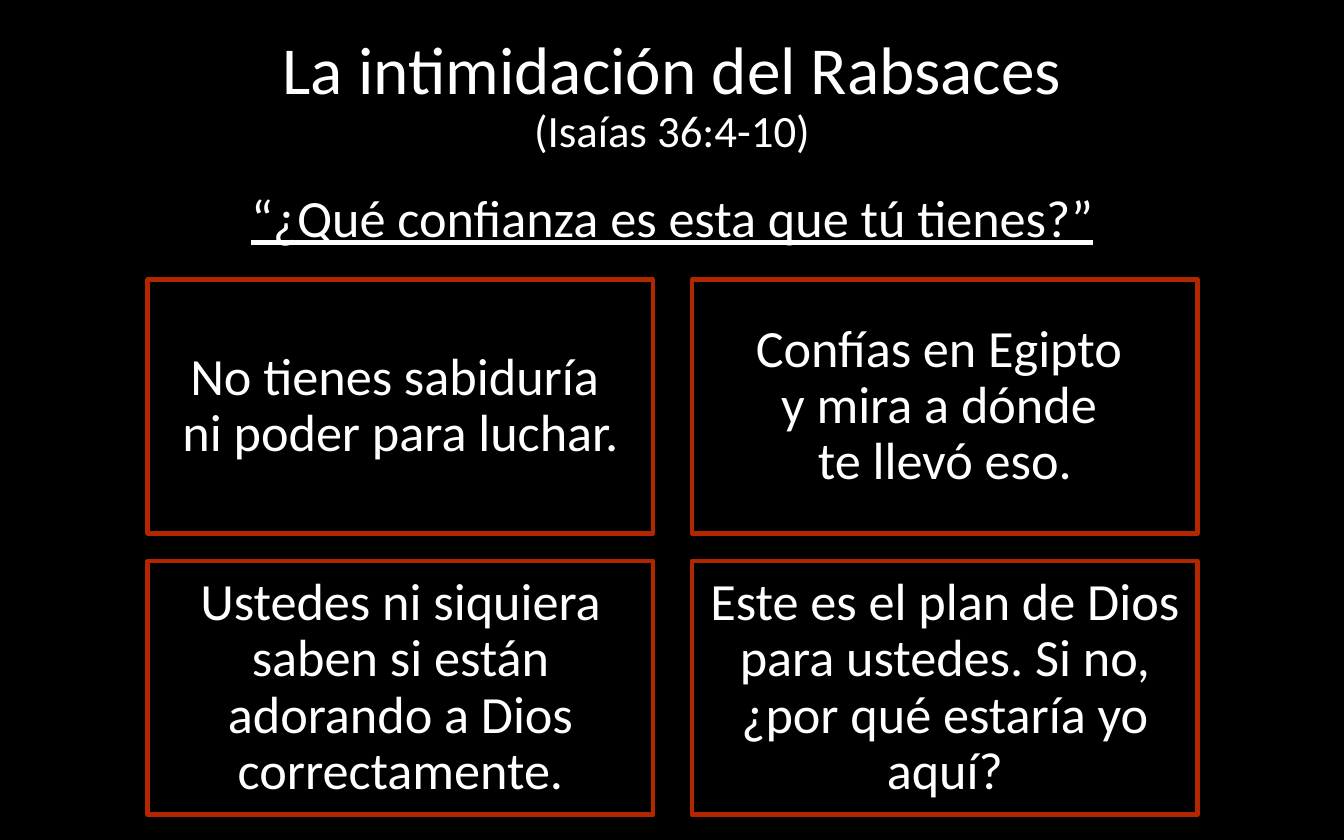
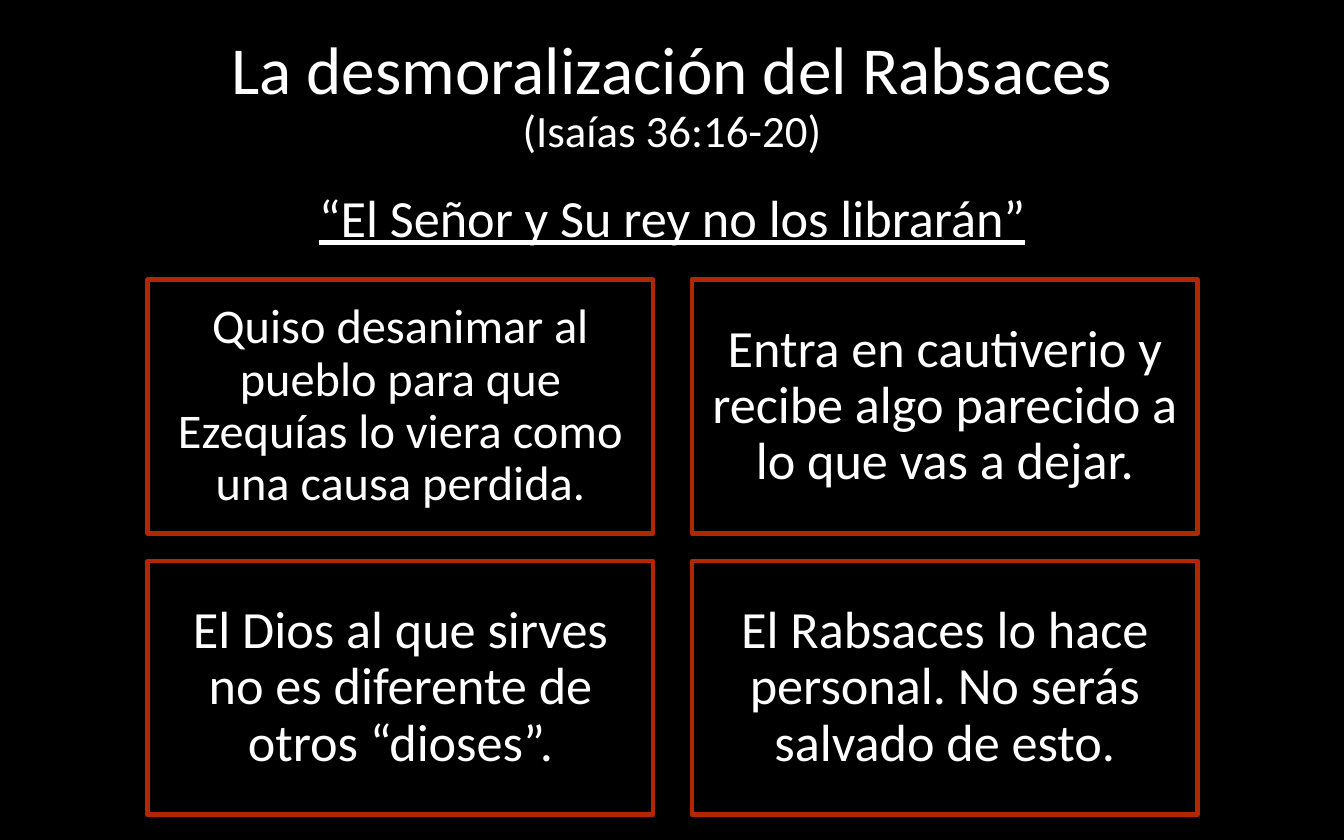
from pptx import Presentation
from pptx import util as u
from pptx.dml.color import RGBColor
from pptx.enum import shapes, text
from pptx.oxml.ns import qn

COLORS = {"background": "000000", "text": "FFFFFF", "frame": "B22600"}
FONT = "Calibri"
TEXT_SIZE = 28


def rgb(name):
    return RGBColor.from_string(COLORS[name])


class Deck:
    WIDTH, HEIGHT = u.Inches(10), u.Inches(6.25)
    TITLE = (0.069, 0.018, 0.862, 0.194)
    BODY = (0.069, 0.221, 0.862, 0.635)
    # Grid of boxes, as shares of the slide: origin, box size, step
    GRID_X, GRID_Y = 0.11, 0.333
    BOX_W, BOX_H = 0.376, 0.302
    STEP_X, STEP_Y = 0.405, 0.335
    COLUMNS = 2

    def __init__(self):
        self.prs = Presentation()
        self.prs.slide_width, self.prs.slide_height = self.WIDTH, self.HEIGHT
        fill = self.prs.slide_master.background.fill
        fill.solid()
        fill.fore_color.rgb = rgb("background")
        self.s = None

    def add_slide(self):
        self.s = self.prs.slides.add_slide(self.prs.slide_layouts[1])

    def area(self, x, y, w, h):
        """Turn shares of the slide into lengths."""
        return (round(x * self.WIDTH), round(y * self.HEIGHT),
                round(w * self.WIDTH), round(h * self.HEIGHT))

    def place(self, sp, shares):
        sp.left, sp.top, sp.width, sp.height = self.area(*shares)

    def set_text(self, sp, content, sizes, anchor, before=7.5, underline=None):
        """Fill a shape with one centred paragraph; the last size serves the remaining lines."""
        tf = sp.text_frame
        tf.word_wrap = True
        tf.auto_size = text.MSO_AUTO_SIZE.NONE
        tf.vertical_anchor = anchor
        p = tf.paragraphs[0]
        p.text = content
        p.alignment = text.PP_ALIGN.CENTER
        p.line_spacing = 0.9
        p.space_before = u.Pt(before)
        for i, r in enumerate(p.runs):
            r.font.name = FONT
            r.font.size = u.Pt(sizes[min(i, len(sizes) - 1)])
            r.font.color.rgb = rgb("text")
            r.font.underline = underline
        return p

    def title(self, heading, passage):
        sp = self.s.shapes.title
        self.place(sp, self.TITLE)
        self.set_text(sp, f"{heading}\v{passage}", (36, 24),
                      text.MSO_ANCHOR.MIDDLE, before=0)

    def quote(self, content):
        sp = self.s.placeholders[1]
        self.place(sp, self.BODY)
        p = self.set_text(sp, content, (TEXT_SIZE,), text.MSO_ANCHOR.TOP, underline=True)
        pPr = p._p.get_or_add_pPr()
        pPr.set("marL", "0")
        pPr.set("indent", "0")
        pPr.append(pPr.makeelement(qn("a:buNone"), {}))

    def box(self, index, content, size=TEXT_SIZE):
        row, column = divmod(index, self.COLUMNS)
        shares = (self.GRID_X + column * self.STEP_X,
                  self.GRID_Y + row * self.STEP_Y, self.BOX_W, self.BOX_H)
        sp = self.s.shapes.add_shape(shapes.MSO_SHAPE.RECTANGLE, *self.area(*shares))
        sp.shadow.inherit = False
        sp.fill.background()
        sp.line.color.rgb = rgb("frame")
        sp.line.width = u.Pt(2.5)
        self.set_text(sp, content, (size,), text.MSO_ANCHOR.MIDDLE)


SLIDES = [
    ("La intimidación del Rabsaces", "(Isaías 36:4-10)",
     "“¿Qué confianza es esta que tú tienes?”",
     [("No tienes sabiduría \vni poder para luchar.",),
      ("Confías en Egipto \vy mira a dónde \vte llevó eso.",),
      ("Ustedes ni siquiera saben si están adorando a Dios correctamente.",),
      ("Este es el plan de Dios para ustedes. Si no, ¿por qué estaría yo aquí?",)]),
    ("La desmoralización del Rabsaces", "(Isaías 36:16-20)",
     "“El Señor y Su rey no los librarán”",
     [("Quiso desanimar al pueblo para que Ezequías lo viera como una causa perdida.", 25.9),
      ("Entra en cautiverio y recibe algo parecido a lo que vas a dejar.",),
      ("El Dios al que sirves no es diferente de otros “dioses”.",),
      ("El Rabsaces lo hace personal. No serás salvado de esto.",)]),
]


def main():
    deck = Deck()
    for heading, passage, quote, boxes in SLIDES:
        deck.add_slide()
        deck.title(heading, passage)
        deck.quote(quote)
        for index, box in enumerate(boxes):
            deck.box(index, *box)
    deck.prs.save("out.pptx")


if __name__ == "__main__":
    main()
